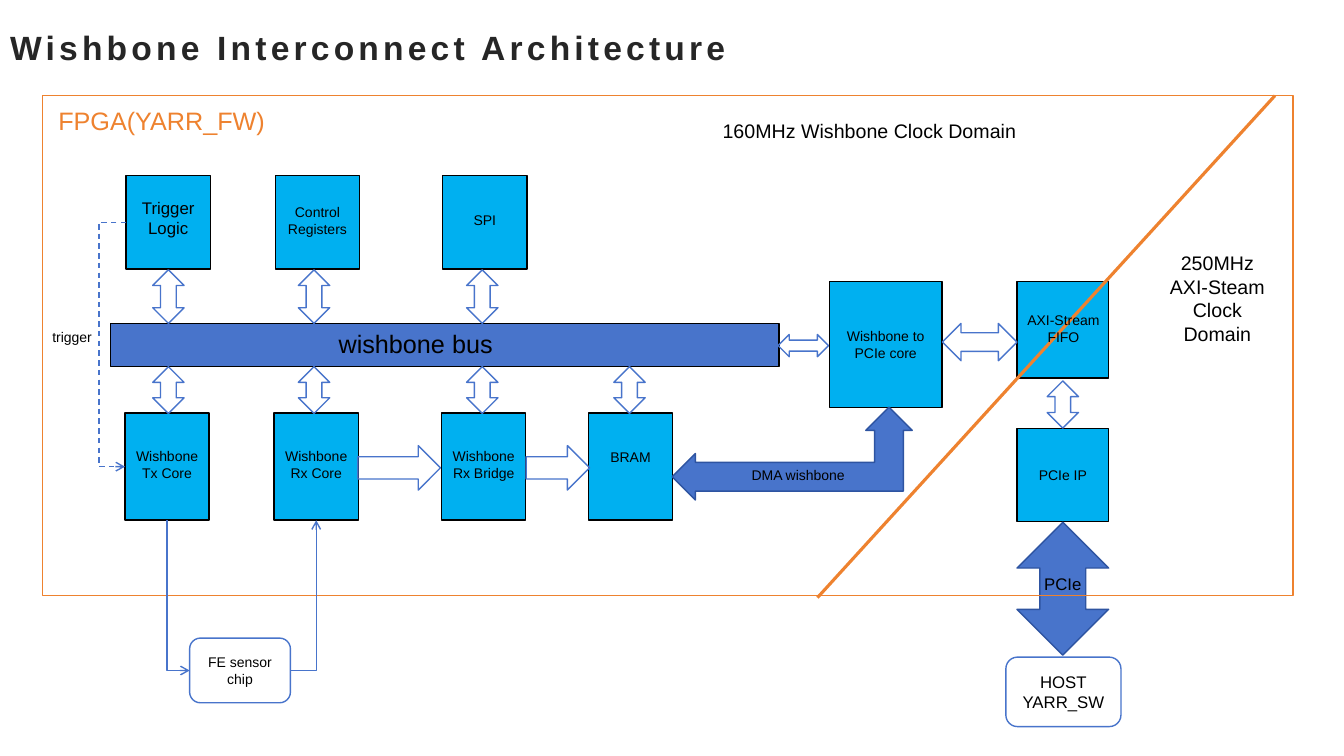
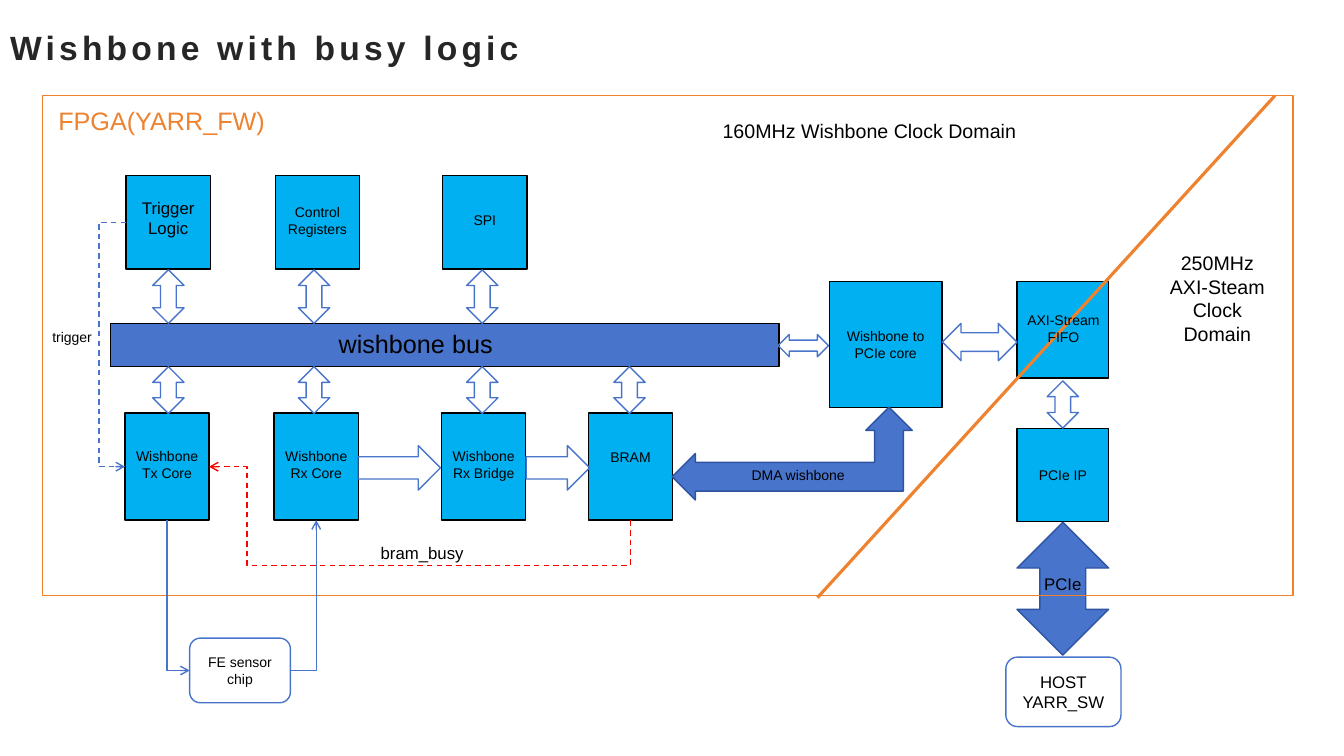
import pptx
import pptx.util
import pptx.dml.color
import pptx.enum.dml
import pptx.enum.shapes
import pptx.enum.text
import pptx.oxml
import pptx.oxml.ns

Cm, Pt = pptx.util.Cm, pptx.util.Pt
RGB = pptx.dml.color.RGBColor
KIND = pptx.enum.shapes.MSO_SHAPE
WIRE = pptx.enum.shapes.MSO_CONNECTOR
ALIGN = pptx.enum.text.PP_ALIGN
ANCHOR = pptx.enum.text.MSO_ANCHOR
qn = pptx.oxml.ns.qn

BLACK, DARK = RGB(0, 0, 0), RGB(0x26, 0x26, 0x26)
BLUE, NAVY = RGB(0x48, 0x74, 0xCB), RGB(0x2E, 0x54, 0xA1)
CYAN, ORANGE, RED = RGB(0, 0xB0, 0xF0), RGB(0xEE, 0x82, 0x2F), RGB(0xFF, 0, 0)
FONT = "Arial"

# Content: all lengths in cm
TITLES = ["Wishbone Interconnect Architecture", "Wishbone with busy logic"]

# Columns on the bus: left of the block, left of its arrow
COLS = [(3.15, 3.85), (6.91, 7.52), (11.13, 11.76), (14.83, 15.47)]
# Blocks of a row: name, text, size, lift of the text
UPPER = [("trigger", "Trigger\nLogic", 12, 0.23),
         ("control", "Control\nRegisters", 10, 0.08),
         ("spi", "SPI", 10, 0.1)]
LOWER = [("tx", "Wishbone\nTx Core", 10, 0.1),
         ("rx", "Wishbone\nRx Core", 10, 0.1),
         ("bridge", "Wishbone\nRx Bridge", 10, 0.1),
         ("bram", "BRAM", 10, 0.5)]
# Rows: blocks, shift, top, height, top and height of the arrows
ROWS = [(UPPER, 0.03, 4.42, 2.36, 6.8, 1.35),
        (LOWER, 0, 10.41, 2.7, 9.24, 1.18)]
BLOCK, SHAFT = 2.12, 0.79

# Other blocks: name, kind, place, fill, line, text, size, lift
BLOCKS = [
    ("bus", KIND.RECTANGLE, (2.79, 8.15, 16.84, 1.09), BLUE, BLACK, "", 18, 0),
    ("core", KIND.RECTANGLE, (20.9, 7.09, 2.84, 3.18), CYAN, BLACK,
     "Wishbone to\nPCIe core", 10, 0),
    ("fifo", KIND.RECTANGLE, (25.63, 7.09, 2.31, 2.44), CYAN, BLACK, "", 10, 0),
    ("ip", KIND.RECTANGLE, (25.63, 10.8, 2.31, 2.34), CYAN, BLACK, "PCIe IP", 10, 0),
    ("chip", KIND.ROUNDED_RECTANGLE, (4.78, 16.08, 2.54, 1.63), None, BLUE,
     "FE sensor\nchip", 10, 0),
    ("host", KIND.ROUNDED_RECTANGLE, (25.35, 16.56, 2.9, 1.75), None, BLUE,
     "HOST\nYARR_SW", 12, 0),
    ("link", KIND.UP_DOWN_ARROW, (25.63, 13.16, 2.31, 3.35), BLUE, NAVY,
     "PCIe", 12, 0.25),
]
ARROWS = [
    (KIND.RIGHT_ARROW, (9.02, 11.23, 2.08, 1.12)),
    (KIND.RIGHT_ARROW, (13.26, 11.23, 1.6, 1.12)),
    (KIND.LEFT_RIGHT_ARROW, (19.61, 8.43, 1.27, 0.56)),
    (KIND.LEFT_RIGHT_ARROW, (23.75, 8.15, 1.88, 0.94)),
    (KIND.UP_DOWN_ARROW, (26.39, 9.6, SHAFT, 1.19)),
]
DMA = (16.94, 10.26, 6.05, 2.34)
FRAME = (1.07, 2.41, 31.52, 12.6)
SPLIT = (20.6, 15.06, 32.13, 2.41)

# Labels: text, place, size, colour, alignment
LABELS = [
    ("wishbone bus", (6.4, 8.15, 8.15, 1.09), 18, BLACK, ALIGN.CENTER),
    ("trigger", (1.07, 8.15, 1.6, 0.69), 10, BLACK, ALIGN.LEFT),
    ("FPGA(YARR_FW)", (1.22, 2.54, 5.97, 1.02), 18, ORANGE, ALIGN.LEFT),
    ("DMA wishbone", (18.39, 11.63, 3.45, 0.84), 10, BLACK, ALIGN.CENTER),
    ("AXI-Stream\nFIFO", (25.35, 7.72, 2.9, 1.12), 10, BLACK, ALIGN.CENTER),
    ("250MHz\nAXI-Steam\nClock Domain", (28.98, 6.2, 3.4, 2.64), 14, BLACK,
     ALIGN.CENTER),
    ("160MHz Wishbone Clock Domain", (17.96, 2.87, 8.74, 0.86), 14, BLACK,
     ALIGN.LEFT),
]
BUSY = ("bram_busy", (8.76, 13.56, 3.76, 0.76), 12, BLACK, ALIGN.CENTER)

# Bent wires: from, side, to, side, form, turn, flip, bends, colour, dashed
WIRES = [
    ("trigger", 1, "tx", 1, "bentConnector3", 180, "flipV", [23], BLUE, True),
    ("tx", 2, "chip", 1, "bentConnector2", 90, "flipV", [], BLUE, False),
    ("chip", 3, "rx", 2, "bentConnector2", 0, "flipV", [], BLUE, False),
]
LOOP = ("bram", 2, "tx", 3, "bentConnector4", 90, "flipH", [-0.84, 0.91], RED, True)


def write(frame, text, size, color, align):
    frame.text = text
    for par in frame.paragraphs:
        par.alignment = align
        par.font.name, par.font.size = FONT, Pt(size)
        par.font.color.rgb = color


def draw(slide, kind, place, fill, edge):
    shape = slide.shapes.add_shape(kind, *map(Cm, place))
    shape.shadow.inherit = False
    if fill is None:
        shape.fill.background()
    else:
        shape.fill.solid()
        shape.fill.fore_color.rgb = fill
    shape.line.color.rgb, shape.line.width = edge, Pt(1)
    return shape


def block(slide, kind, place, fill, edge, text, size, lift):
    shape = draw(slide, kind, place, fill, edge)
    if text:
        frame = shape.text_frame
        frame.margin_left = frame.margin_right = frame.margin_top = 0
        frame.margin_bottom = Cm(lift)
        frame.vertical_anchor = ANCHOR.MIDDLE
        write(frame, text, size, BLACK, ALIGN.CENTER)
    return shape


def label(slide, text, place, *style):
    frame = slide.shapes.add_textbox(*map(Cm, place)).text_frame
    frame.word_wrap = True
    write(frame, text, *style)


def wire(slide, form, ends, color, width):
    line = slide.shapes.add_connector(form, *ends)
    line.line.color.rgb, line.line.width = color, Pt(width)
    pptx.oxml.ns  # namespace map used by qn
    line._element.spPr.append(
        line._element.spPr.makeelement(qn("a:effectLst"), {}))
    return line


def bend(slide, parts, start, side, stop, port, form, turn, flip, bends, color, dashed):
    line = wire(slide, WIRE.ELBOW, (0, 0, 0, 0), color, 1)
    line.begin_connect(parts[start], side)
    line.end_connect(parts[stop], port)
    # A quarter turn swaps width and height about the centre
    x, y, w, h = line.left, line.top, line.width, line.height
    if turn == 90:
        x, y, w, h = x + (w - h) // 2, y + (h - w) // 2, h, w
    line.left, line.top, line.width, line.height = x, y, w, h
    props = line._element.spPr
    frame = props.find(qn("a:xfrm"))
    frame.set("rot", str(turn * 60000))
    for key in ("flipH", "flipV"):
        frame.set(key, str(int(key == flip)))
    # Form and bends
    geom = props.find(qn("a:prstGeom"))
    geom.set("prst", form)
    guides = geom.find(qn("a:avLst"))
    for num, part in enumerate(bends, 1):
        guide = guides.makeelement(qn("a:gd"), {
            "name": f"adj{num}", "fmla": f"val {round(part * 100000)}"})
        guides.append(guide)
    # Dash and head
    if dashed:
        line.line.dash_style = pptx.enum.dml.MSO_LINE.DASH
    edge = props.find(qn("a:ln"))
    edge.append(edge.makeelement(qn("a:tailEnd"), {"type": "arrow"}))


def head(slide, text):
    title = slide.shapes.title
    title.left, title.top, title.width, title.height = map(Cm, (0, 0.2, 30.48, 1.96))
    frame = title.text_frame
    frame.auto_size = pptx.enum.text.MSO_AUTO_SIZE.NONE
    frame.vertical_anchor = ANCHOR.MIDDLE
    write(frame, text, 24, DARK, ALIGN.LEFT)
    frame.paragraphs[0].font.bold = True
    frame.paragraphs[0].runs[0].font._element.set("spc", "300")


def scheme(slide):
    parts = {}
    for name, *rest in BLOCKS:
        parts[name] = block(slide, *rest)
    # Rows above and below the bus
    for row, shift, top, high, tip, reach in ROWS:
        for (name, *text), (left, mid) in zip(row, COLS):
            place = (left + shift, top, BLOCK, high)
            parts[name] = block(slide, KIND.RECTANGLE, place, CYAN, BLACK, *text)
            draw(slide, KIND.UP_DOWN_ARROW, (mid, tip, SHAFT, reach), None, BLUE)
    # Arrows between blocks
    for kind, place in ARROWS:
        draw(slide, kind, place, None, BLUE)
    dma = draw(slide, KIND.LEFT_UP_ARROW, DMA, BLUE, NAVY)
    dma.adjustments[0] = 0.31
    # Frame, clock split, wires and labels
    draw(slide, KIND.RECTANGLE, FRAME, None, ORANGE)
    wire(slide, WIRE.STRAIGHT, map(Cm, SPLIT), ORANGE, 2.25)
    for item in WIRES:
        bend(slide, parts, *item)
    for item in LABELS:
        label(slide, *item)
    return parts


def main():
    deck = pptx.Presentation()
    deck.slide_width, deck.slide_height = Cm(33.87), Cm(19.05)
    for text in TITLES:
        slide = deck.slides.add_slide(deck.slide_layouts[5])
        head(slide, text)
        parts = scheme(slide)
    # Busy loop on the last slide
    bend(slide, parts, *LOOP)
    label(slide, *BUSY)
    deck.save("out.pptx")


if __name__ == "__main__":
    main()
